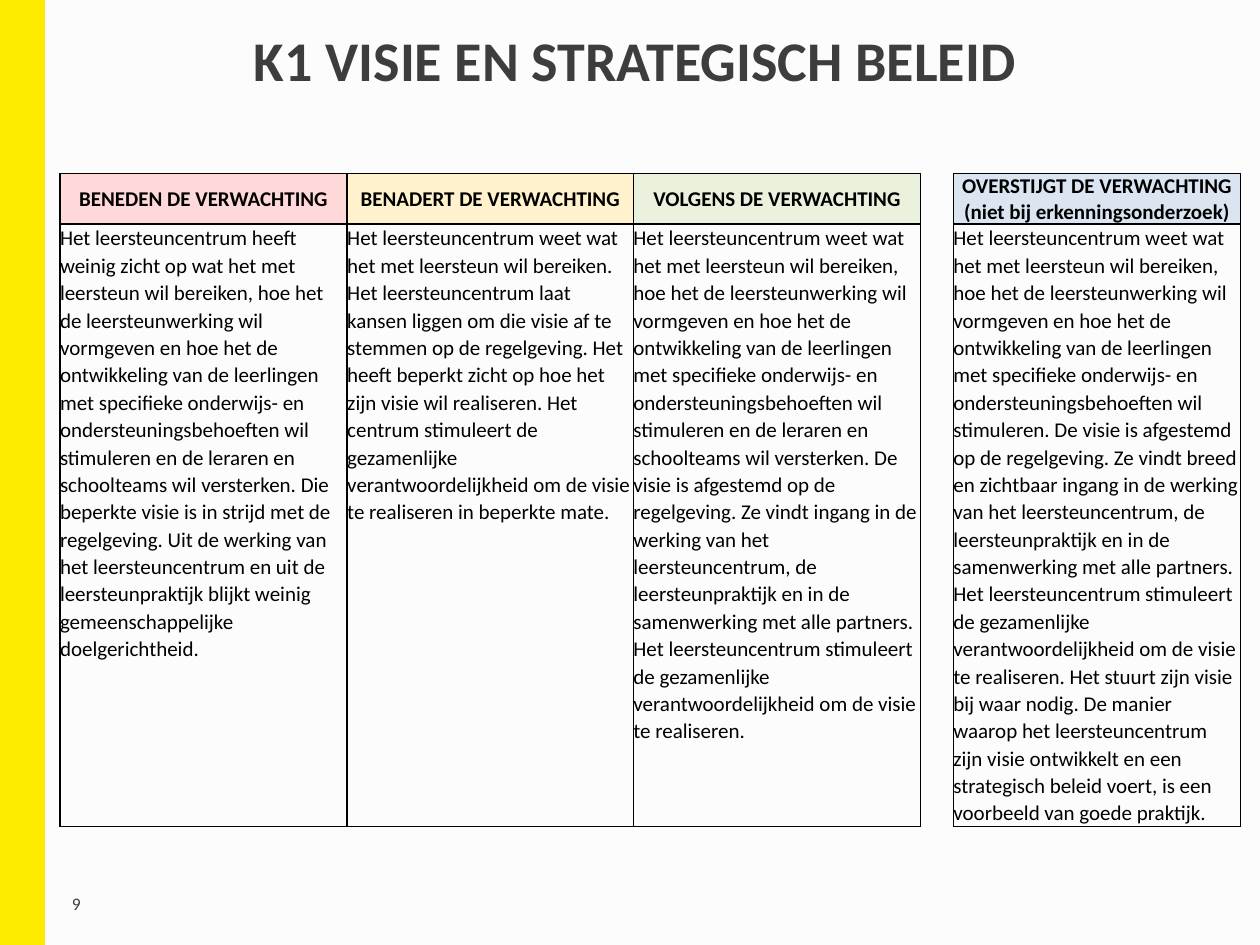
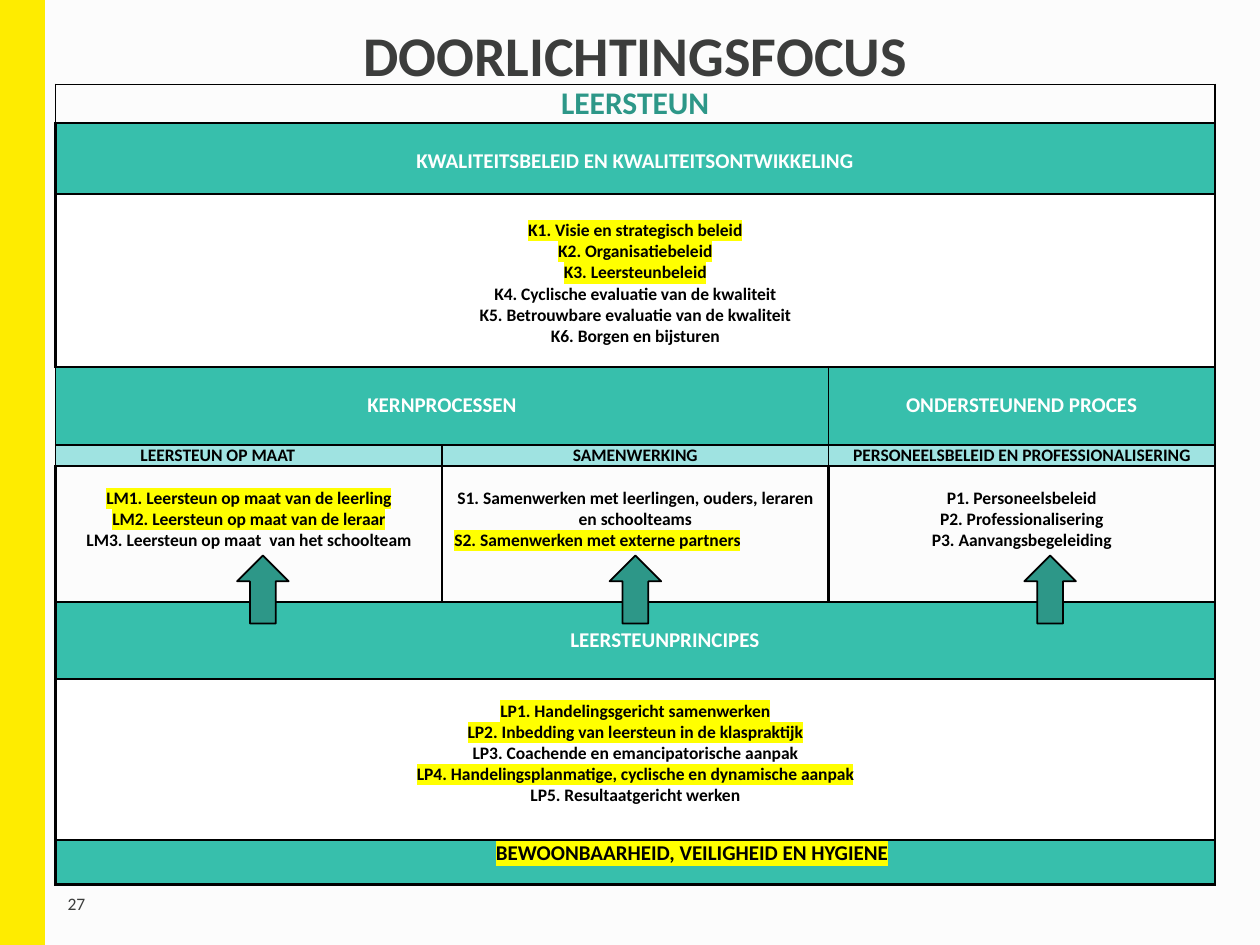
"""Build two slides on the inspection framework for learning support centres."""
from lxml import etree
from pptx import Presentation
from pptx.dml.color import RGBColor
from pptx.enum import shapes, text
from pptx.oxml import ns
from pptx.util import Cm, Pt

FONT = "Calibri"
BLACK, WHITE, GREY = "000000", "FFFFFF", "3C3D3C"
YELLOW, PAPER, MARK = "FEEC00", "FCFCFC", "FFFF00"
TEAL, DARK, PALE = "37BFAC", "2D9788", "9FE3E1"
PLAIN = "{2D5ABB26-0587-4C30-8999-92F81FD0307C}"
CENTER, LEFT = text.PP_ALIGN.CENTER, text.PP_ALIGN.LEFT
MIDDLE, TOP = text.MSO_ANCHOR.MIDDLE, text.MSO_ANCHOR.TOP

LEVELS = [
    ("FFD9D9", "BENEDEN DE VERWACHTING",
     "Het leersteuncentrum heeft weinig zicht op wat het met leersteun wil "
     "bereiken, hoe het de leersteunwerking wil vormgeven en hoe het de "
     "ontwikkeling van de leerlingen met specifieke onderwijs- en "
     "ondersteuningsbehoeften wil stimuleren en de leraren en schoolteams wil "
     "versterken. Die beperkte visie is in strijd met de regelgeving. Uit de "
     "werking van het leersteuncentrum en uit de leersteunpraktijk blijkt "
     "weinig gemeenschappelijke doelgerichtheid."),
    ("FFF2CC", "BENADERT DE VERWACHTING",
     "Het leersteuncentrum weet wat het met leersteun wil bereiken. Het "
     "leersteuncentrum laat kansen liggen om die visie af te stemmen op de "
     "regelgeving. Het heeft beperkt zicht op hoe het zijn visie wil "
     "realiseren. Het centrum stimuleert de gezamenlijke "
     "verantwoordelijkheid om de visie te realiseren in beperkte mate."),
    ("EAF1DD", "VOLGENS DE VERWACHTING",
     "Het leersteuncentrum weet wat het met leersteun wil bereiken, hoe het "
     "de leersteunwerking wil vormgeven en hoe het de ontwikkeling van de "
     "leerlingen met specifieke onderwijs- en ondersteuningsbehoeften wil "
     "stimuleren en de leraren en schoolteams wil versterken. De visie is "
     "afgestemd op de regelgeving. Ze vindt ingang in de werking van het "
     "leersteuncentrum, de leersteunpraktijk en in de samenwerking met alle "
     "partners. Het leersteuncentrum stimuleert de gezamenlijke "
     "verantwoordelijkheid om de visie te realiseren."),
    None,
    ("DBE5F1", "OVERSTIJGT DE VERWACHTING\n(niet bij erkenningsonderzoek)",
     "Het leersteuncentrum weet wat het met leersteun wil bereiken, hoe het "
     "de leersteunwerking wil vormgeven en hoe het de ontwikkeling van de "
     "leerlingen met specifieke onderwijs- en ondersteuningsbehoeften wil "
     "stimuleren. De visie is afgestemd op de regelgeving. Ze vindt breed en "
     "zichtbaar ingang in de werking van het leersteuncentrum, de "
     "leersteunpraktijk en in de samenwerking met alle partners. Het "
     "leersteuncentrum stimuleert de gezamenlijke verantwoordelijkheid om de "
     "visie te realiseren. Het stuurt zijn visie bij waar nodig. De manier "
     "waarop het leersteuncentrum zijn visie ontwikkelt en een strategisch "
     "beleid voert, is een voorbeeld van goede praktijk."),
]

HEAD = dict(fill=TEAL, size=12, color=WHITE, top=0.52)
LIST = dict(size=10, top=0.43)
FOCUS = [
    (0.78, 1, dict(size=18, color=DARK), ["LEERSTEUN"]),
    (1.43, 1.5, HEAD, ["KWALITEITSBELEID EN KWALITEITSONTWIKKELING"]),
    (3.49, 1.5, dict(LIST, fill=WHITE, top=0.52),
     ["*K1. Visie en strategisch beleid\n*K2. Organisatiebeleid\n"
      "*K3. Leersteunbeleid\nK4. Cyclische evaluatie van de kwaliteit\n"
      "K5. Betrouwbare evaluatie van de kwaliteit\n"
      "K6. Borgen en bijsturen"]),
    (1.57, 1, HEAD, ["KERNPROCESSEN", "ONDERSTEUNEND PROCES"]),
    (0.43, 1, dict(size=10, fill=PALE),
     ["LEERSTEUN OP MAAT", "SAMENWERKING",
      "PERSONEELSBELEID EN PROFESSIONALISERING"]),
    (2.74, 1.5, LIST,
     ["*LM1. Leersteun op maat van de leerling\n"
      "*LM2. Leersteun op maat van de leraar\n"
      "LM3. Leersteun op maat  van het schoolteam",
      "S1. Samenwerken met leerlingen, ouders, leraren\nen schoolteams\n"
      "*S2. Samenwerken met externe partners",
      "P1. Personeelsbeleid\nP2. Professionalisering\n"
      "P3. Aanvangsbegeleiding"]),
    (1.55, 1.5, HEAD, ["LEERSTEUNPRINCIPES"]),
    (3.25, 1.5, dict(LIST, fill=WHITE),
     ["*LP1. Handelingsgericht samenwerken\n"
      "*LP2. Inbedding van leersteun in de klaspraktijk\n"
      "LP3. Coachende en emancipatorische aanpak\n"
      "*LP4. Handelingsplanmatige, cyclische en dynamische aanpak\n"
      "LP5. Resultaatgericht werken"]),
    (0.89, 1.5, dict(size=12, fill=TEAL),
     ["*BEWOONBAARHEID, VEILIGHEID EN HYGIENE"]),
]


def rgb(code):
    """Turn a hex string into a colour."""
    return RGBColor.from_string(code)


def paint(shape, fill, line, width):
    """Give a shape a flat fill and an outline."""
    shape.shadow.inherit = False
    shape.fill.solid()
    shape.fill.fore_color.rgb = rgb(fill)
    shape.line.color.rgb = rgb(line)
    shape.line.width = Pt(width)


def write(frame, words, size, color=BLACK, bold=True, align=CENTER):
    """Write one paragraph per line; a leading star highlights the line."""
    frame.word_wrap = True
    for i, line in enumerate(words.split("\n")):
        para = frame.paragraphs[0] if i == 0 else frame.add_paragraph()
        para.alignment = align
        font = para.font
        font.name, font.size, font.bold = FONT, Pt(size), bold
        font.color.rgb = rgb(color)
        run = para.add_run()
        run.text = line.lstrip("*")
        if line.startswith("*"):
            props = run._r.get_or_add_rPr()
            glow = etree.SubElement(props, ns.qn("a:highlight"))
            etree.SubElement(glow, ns.qn("a:srgbClr"), val=MARK)


def edge(cell, width, sides="LRTB"):
    """Draw black borders on the named sides of a cell."""
    props = cell._tc.get_or_add_tcPr()
    for i, side in enumerate(sides):
        line = etree.Element(ns.qn("a:ln" + side), w=str(Pt(width)))
        fill = etree.SubElement(line, ns.qn("a:solidFill"))
        etree.SubElement(fill, ns.qn("a:srgbClr"), val=BLACK)
        props.insert(i, line)


def inset(cell, top=0, shift=0):
    """Set cell margins; shift moves the text right or, if negative, left."""
    cell.margin_top, cell.margin_bottom = Cm(top), 0
    cell.margin_left, cell.margin_right = Cm(max(shift, 0)), Cm(max(-shift, 0))


def tint(cell, fill):
    """Fill a cell, or leave it clear."""
    if fill:
        cell.fill.solid()
        cell.fill.fore_color.rgb = rgb(fill)
    else:
        cell.fill.background()


def grid(slide, left, top, cols, rows):
    """Add an unstyled table with the given column and row sizes."""
    frame = slide.shapes.add_table(
        len(rows), len(cols), Cm(left), Cm(top), Cm(sum(cols)), Cm(sum(rows)))
    frame.element.find(".//" + ns.qn("a:tableStyleId")).text = PLAIN
    table = frame.table
    table.first_row = table.horz_banding = False
    for col, width in zip(table.columns, cols):
        col.width = Cm(width)
    for row, height in zip(table.rows, rows):
        row.height = Cm(height)
    return table


def band(slide, master):
    """Put the yellow side band and the page colour on the master."""
    master.background.fill.solid()
    master.background.fill.fore_color.rgb = rgb(PAPER)
    bar = slide.shapes.add_shape(
        shapes.MSO_SHAPE.RECTANGLE, 0, 0, Cm(0.89), Cm(19.05))
    paint(bar, YELLOW, YELLOW, 1.5)
    master.shapes.element.insert(2, bar.element)


def page(deck, title, number, top=0):
    """Add a slide with its title and page number."""
    slide = deck.slides.add_slide(deck.slide_layouts[5])
    head = slide.shapes.title
    head.left, head.top = Cm(0.89), Cm(top)
    head.width, head.height = Cm(23.83), Cm(2.39)
    head.text_frame.vertical_anchor = MIDDLE
    write(head.text_frame, title, 32, GREY)
    box = slide.shapes.add_textbox(Cm(0.89), Cm(17.7), Cm(1.3), Cm(1.02))
    box.text_frame.vertical_anchor = MIDDLE
    write(box.text_frame, number, 10, GREY, False)
    return slide


def rubric(slide):
    """Add the table of expectation levels."""
    table = grid(slide, 1.21, 3.5, [5.79, 5.77, 5.79, 0.66, 5.79], [1.02, 12.14])
    for col, level in enumerate(LEVELS):
        head, body = table.cell(0, col), table.cell(1, col)
        for cell in (head, body):
            inset(cell)
            tint(cell, level[0] if level and cell is head else None)
            edge(cell, 1, "LRTB" if level else "LR")
        if level:
            head.vertical_anchor, body.vertical_anchor = MIDDLE, TOP
            write(head.text_frame, level[1], 12)
            write(body.text_frame, level[2], 12, bold=False, align=LEFT)
            for para in body.text_frame.paragraphs:
                para.line_spacing = 1.07


def focus(slide):
    """Add the table of inspection themes."""
    table = grid(slide, 1.12, 1.7, [7.79] * 3, [row[0] for row in FOCUS])
    shifts = {(4, 0): -1.25, (6, 0): 1.2, (8, 0): 2.3}
    for r, (_, width, look, words) in enumerate(FOCUS):
        span = 4 - len(words)
        if span > 1:
            table.cell(r, 0).merge(table.cell(r, span - 1))
        for col in range(3):
            cell = table.cell(r, col)
            inset(cell, look.get("top", 0), shifts.get((r, col), 0))
            tint(cell, look.get("fill"))
            edge(cell, width)
        for i, item in enumerate(words):
            cell = table.cell(r, i + span - 1 if i else 0)
            write(cell.text_frame, item, look["size"], look.get("color", BLACK))
    last = table.cell(5, 1).text_frame.paragraphs[-1]
    last.alignment = LEFT
    last._p.get_or_add_pPr().set("marL", str(Cm(0.25)))


def arrow(slide, left):
    """Add an upward arrow from the principles to a process."""
    shape = slide.shapes.add_shape(
        shapes.MSO_SHAPE.UP_ARROW, Cm(left), Cm(11.2), Cm(1.04), Cm(1.37))
    paint(shape, DARK, BLACK, 1)


def main():
    """Build and save the deck."""
    deck = Presentation()
    deck.slide_width, deck.slide_height = Cm(25.4), Cm(19.05)
    vision = page(deck, "K1 VISIE EN STRATEGISCH BELEID", "9")
    band(vision, deck.slide_master)
    rubric(vision)
    scope = page(deck, "DOORLICHTINGSFOCUS", "27", -0.1)
    focus(scope)
    for left in (4.78, 12.29, 20.65):
        arrow(scope, left)
    deck.save("out.pptx")


if __name__ == "__main__":
    main()
